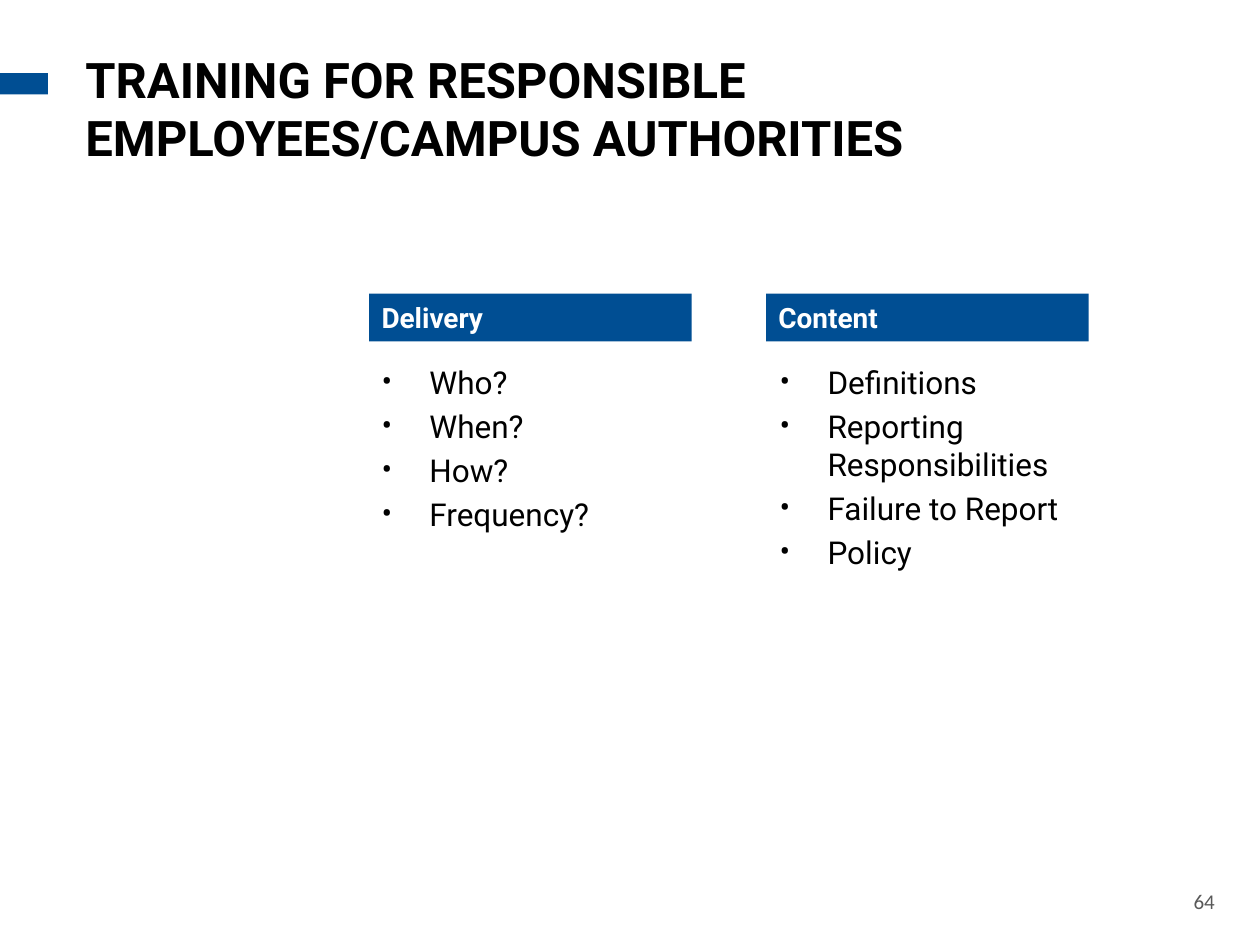
"""Build the slide on training for responsible employees and campus authorities."""
from dataclasses import dataclass

from lxml import etree
from pptx import Presentation
from pptx.dml.color import RGBColor
from pptx.enum.shapes import MSO_SHAPE
from pptx.enum.text import MSO_ANCHOR, PP_ALIGN
from pptx.oxml.ns import qn
from pptx.util import Inches, Pt

RECTANGLE = MSO_SHAPE.RECTANGLE
TOP, MIDDLE = MSO_ANCHOR.TOP, MSO_ANCHOR.MIDDLE
LEFT, RIGHT = PP_ALIGN.LEFT, PP_ALIGN.RIGHT

COLORS = {
    "blue": "004E93",
    "black": "000000",
    "white": "FFFFFF",
    "gray": "595959",
}
TITLE_FORMAT = {"name": "Roboto", "size": Pt(28), "bold": True}
HEADING_FORMAT = {"name": "Roboto", "size": Pt(16), "bold": True}
LIST_FORMAT = {"name": "Roboto", "size": Pt(18), "bold": False}
NUMBER_FORMAT = {"name": "Calibri", "size": Pt(12), "bold": False}

HEADING_TOP, HEADING_WIDTH, HEADING_HEIGHT = 2.33, 2.56, 0.38
LIST_TOP, LIST_WIDTH, LIST_HEIGHT = 2.83, 2.57, 3.75
BULLET_INDENT = 0.38


@dataclass(frozen=True)
class Box:
    """Position and size in inches."""

    left: float
    top: float
    width: float
    height: float

    def lengths(self) -> list:
        """Return the four lengths in the order that shapes take them."""
        return [Inches(value) for value in (self.left, self.top, self.width, self.height)]


@dataclass(frozen=True)
class Topic:
    """A headed column of bullet points."""

    left: float
    list_left: float
    heading: str
    points: tuple[str, ...]


TOPICS = (
    Topic(2.93, 2.93, "Delivery", ("Who?", "When?", "How?", "Frequency?")),
    Topic(
        6.08,
        6.09,
        "Content",
        ("Definitions", "Reporting Responsibilities", "Failure to Report", "Policy"),
    ),
)


def add_bar(slide, box: Box, color: str):
    """Draw a plain filled rectangle."""
    shape = slide.shapes.add_shape(RECTANGLE, *box.lengths())
    shape.shadow.inherit = False
    shape.fill.solid()
    shape.fill.fore_color.rgb = RGBColor.from_string(COLORS[color])
    shape.line.fill.background()
    return shape


def add_bullet(paragraph, font_name: str) -> None:
    """Give a paragraph a bullet with a hanging indent."""
    properties = paragraph._p.get_or_add_pPr()
    properties.set("marL", str(Inches(BULLET_INDENT)))
    properties.set("indent", str(-Inches(BULLET_INDENT)))
    etree.SubElement(properties, qn("a:buFont")).set("typeface", font_name)
    etree.SubElement(properties, qn("a:buChar")).set("char", "•")


def write(shape, lines: tuple[str, ...], color: str, formats: dict,
          anchor=TOP, alignment=LEFT, bulleted: bool = False) -> None:
    """Fill a shape with one formatted paragraph per line."""
    frame = shape.text_frame
    frame.word_wrap = True
    frame.vertical_anchor = anchor
    for index, line in enumerate(lines):
        paragraph = frame.add_paragraph() if index else frame.paragraphs[0]
        paragraph.alignment = alignment
        if index:
            paragraph.space_before = Pt(3.6)
        if bulleted:
            add_bullet(paragraph, formats["name"])
        run = paragraph.add_run()
        run.text = line
        for name, value in formats.items():
            setattr(run.font, name, value)
        run.font.color.rgb = RGBColor.from_string(COLORS[color])


def add_text(slide, box: Box, lines: tuple[str, ...], color: str, formats: dict, **layout) -> None:
    """Add a text box and write its lines."""
    write(slide.shapes.add_textbox(*box.lengths()), lines, color, formats, **layout)


def add_topic(slide, topic: Topic) -> None:
    """Draw a heading bar with the bullet list below."""
    heading = add_bar(
        slide, Box(topic.left, HEADING_TOP, HEADING_WIDTH, HEADING_HEIGHT), "blue"
    )
    write(heading, (topic.heading,), "white", HEADING_FORMAT, anchor=MIDDLE)
    add_text(slide, Box(topic.list_left, LIST_TOP, LIST_WIDTH, LIST_HEIGHT),
             topic.points, "black", LIST_FORMAT, bulleted=True)


def main() -> None:
    """Build and save the presentation."""
    presentation = Presentation()
    presentation.slide_width, presentation.slide_height = Inches(10), Inches(7.5)
    slide = presentation.slides.add_slide(presentation.slide_layouts[6])
    add_bar(slide, Box(-0.01, 0.58, 0.39, 0.17), "blue")
    add_text(slide, Box(9.26, 7, 0.48, 0.3), ("64",), "gray", NUMBER_FORMAT,
             anchor=MIDDLE, alignment=RIGHT)
    for topic in TOPICS:
        add_topic(slide, topic)
    add_text(slide, Box(0.58, 0.34, 8.06, 1.31),
             ("TRAINING FOR RESPONSIBLE EMPLOYEES/CAMPUS AUTHORITIES",),
             "black", TITLE_FORMAT)
    presentation.save("out.pptx")


if __name__ == "__main__":
    main()
